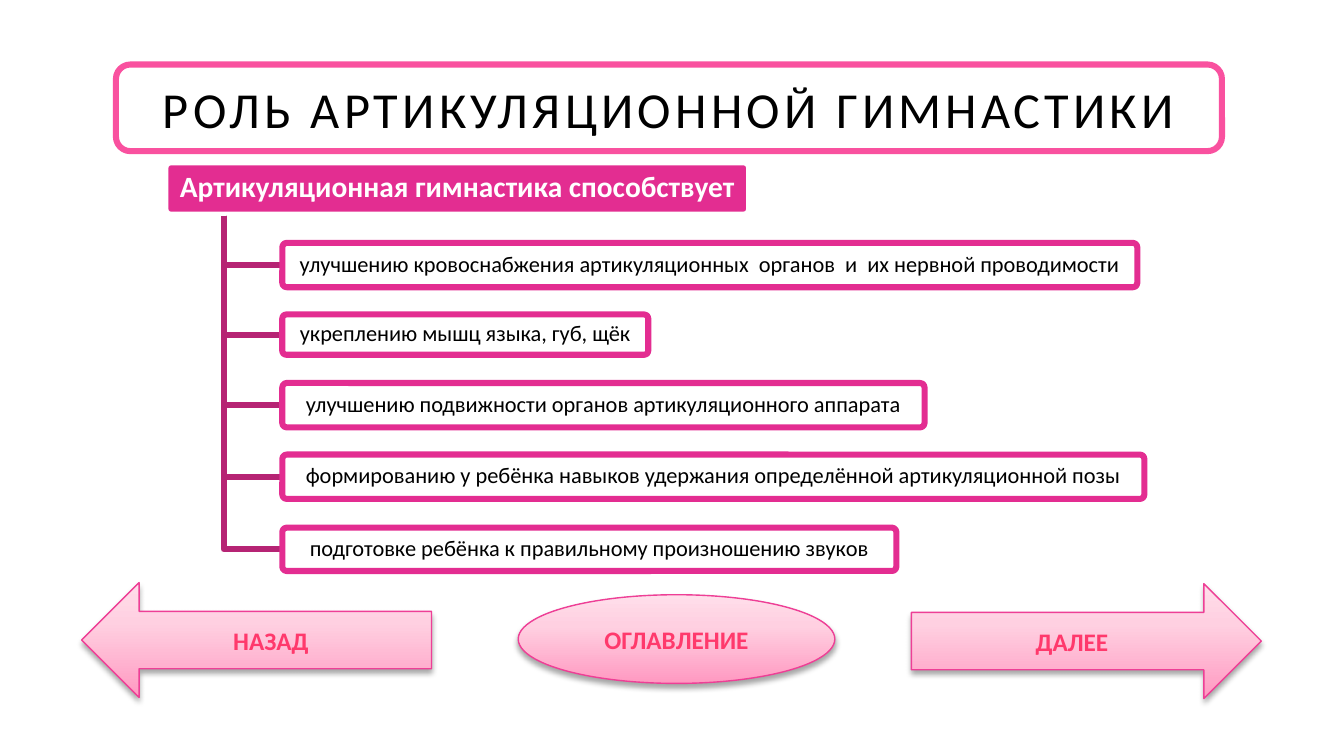
from lxml import etree
from pptx import Presentation
from pptx.dml.color import RGBColor
from pptx.enum.shapes import MSO_SHAPE
from pptx.enum.text import MSO_ANCHOR, MSO_AUTO_SIZE, PP_ALIGN
from pptx.oxml import parse_xml
from pptx.util import Inches, Pt

ROUND, OVAL = MSO_SHAPE.ROUNDED_RECTANGLE, MSO_SHAPE.OVAL
LEFT, RIGHT = MSO_SHAPE.LEFT_ARROW, MSO_SHAPE.RIGHT_ARROW
MIDDLE, CENTER = MSO_ANCHOR.MIDDLE, PP_ALIGN.CENTER
NS = "http://schemas.openxmlformats.org/drawingml/2006/main"
HEX = {
    "white": "FFFFFF", "black": "000000", "frame": "F9519F",
    "pink": "E32D91", "stem": "B62474", "edge": "EE3F96", "label": "FF396C",
}
COLOR = {name: RGBColor.from_string(code) for name, code in HEX.items()}
STOPS = [(0, "FF99C1"), (65, "FFD0E1"), (100, "FFDEEA")]


def add_box(kind, x, y, w, h, line, weight, fill=None):
    box = shapes.add_shape(kind, Inches(x), Inches(y), Inches(w), Inches(h))
    box.shadow.inherit = False
    box.line.color.rgb = COLOR[line]
    box.line.width = Pt(weight)
    if fill:
        box.fill.solid()
        box.fill.fore_color.rgb = COLOR[fill]
    else:
        box.fill.background()
    return box


def set_text(shape, text, size, color, bold=False, inset=None, spacing=None):
    frame = shape.text_frame
    frame.text = text
    frame.word_wrap = True
    frame.auto_size = MSO_AUTO_SIZE.NONE
    frame.vertical_anchor = MIDDLE
    if inset is not None:
        for side in ("left", "right", "top", "bottom"):
            setattr(frame, f"margin_{side}", Inches(inset))
    par = frame.paragraphs[0]
    par.alignment = CENTER
    par.line_spacing = spacing
    font = par.runs[0].font
    for key, value in {"name": "Calibri", "size": Pt(size), "bold": bold}.items():
        setattr(font, key, value)
    font.color.rgb = COLOR[color]


deck = Presentation()
deck.slide_width, deck.slide_height = Inches(13.33), Inches(7.5)
slide = deck.slides.add_slide(deck.slide_layouts[5])
shapes = slide.shapes

# Title inside a rounded frame
title = shapes.title
place = {"left": 1.15, "top": 0.64, "width": 10.97, "height": 0.86}
for key, value in place.items():
    setattr(title, key, Inches(value))
set_text(title, "РОЛЬ АРТИКУЛЯЦИОННОЙ ГИМНАСТИКИ", 36, "black")
title.text_frame.paragraphs[0].runs[0].font._element.set("spc", "300")
add_box(ROUND, *place.values(), "frame", 4.33)

# Navigation buttons with gradient and shadow
buttons = [
    (RIGHT, 9.04, 5.79, 3.47, 1.14, "ДАЛЕЕ"),
    (LEFT, 0.81, 5.78, 3.47, 1.14, "НАЗАД"),
    (OVAL, 5.14, 5.9, 3.14, 0.88, "ОГЛАВЛЕНИЕ"),
]
stops = "".join(
    f'<a:gs pos="{pos * 1000}"><a:srgbClr val="{code}"/></a:gs>' for pos, code in STOPS
)
for kind, x, y, w, h, text in buttons:
    button = add_box(kind, x, y, w, h, "edge", 1)
    props = button._element.spPr
    blank = props.find(f"{{{NS}}}noFill")
    props.replace(blank, parse_xml(
        f'<a:gradFill xmlns:a="{NS}" rotWithShape="1"><a:gsLst>{stops}</a:gsLst>'
        '<a:lin ang="16200000" scaled="0"/></a:gradFill>'))
    effects = props.find(f"{{{NS}}}effectLst")
    shade = etree.SubElement(effects, f"{{{NS}}}outerShdw", blurRad=str(Pt(4)),
                             dist=str(Pt(3)), dir="5400000", rotWithShape="0")
    tint = etree.SubElement(shade, f"{{{NS}}}srgbClr", val=HEX["black"])
    etree.SubElement(tint, f"{{{NS}}}alpha", val="35000")
    set_text(button, text, 18, "label", bold=True)

# Heading of the tree
head = add_box(ROUND, 1.64, 1.61, 5.79, 0.52, "white", 4.33, "pink")
head.adjustments[0] = 0.1
set_text(head, "Артикуляционная гимнастика способствует", 21, "white", True, 0.03, 0.9)

# Branches: middle, width, height, text
branches = [
    (2.63, 8.48, 0.44,
     "улучшению кровоснабжения артикуляционных  органов  и  их нервной проводимости"),
    (3.32, 3.63, 0.4, "укреплению мышц языка, губ, щёк"),
    (4.02, 6.37, 0.44, "улучшению подвижности органов артикуляционного аппарата"),
    (4.73, 8.55, 0.44,
     "формированию у ребёнка навыков удержания определённой артикуляционной позы"),
    (5.45, 6.09, 0.43, "подготовке ребёнка к правильному произношению звуков"),
]
stem, start, edge = 2.22, 2.14, 2.8
for mid, w, h, text in branches:
    path = shapes.build_freeform(Inches(stem), Inches(start))
    bends = [(Inches(stem), Inches(mid)), (Inches(edge), Inches(mid))]
    path.add_line_segments(bends, close=False)
    elbow = path.convert_to_shape()
    elbow.shadow.inherit = False
    elbow.fill.background()
    elbow.line.color.rgb = COLOR["stem"]
    elbow.line.width = Pt(4.33)
    item = add_box(ROUND, edge, mid - h / 2, w, h, "pink", 4.33, "white")
    item.adjustments[0] = 0.1
    set_text(item, text, 16, "black", inset=0.02, spacing=0.9)

deck.save("out.pptx")
